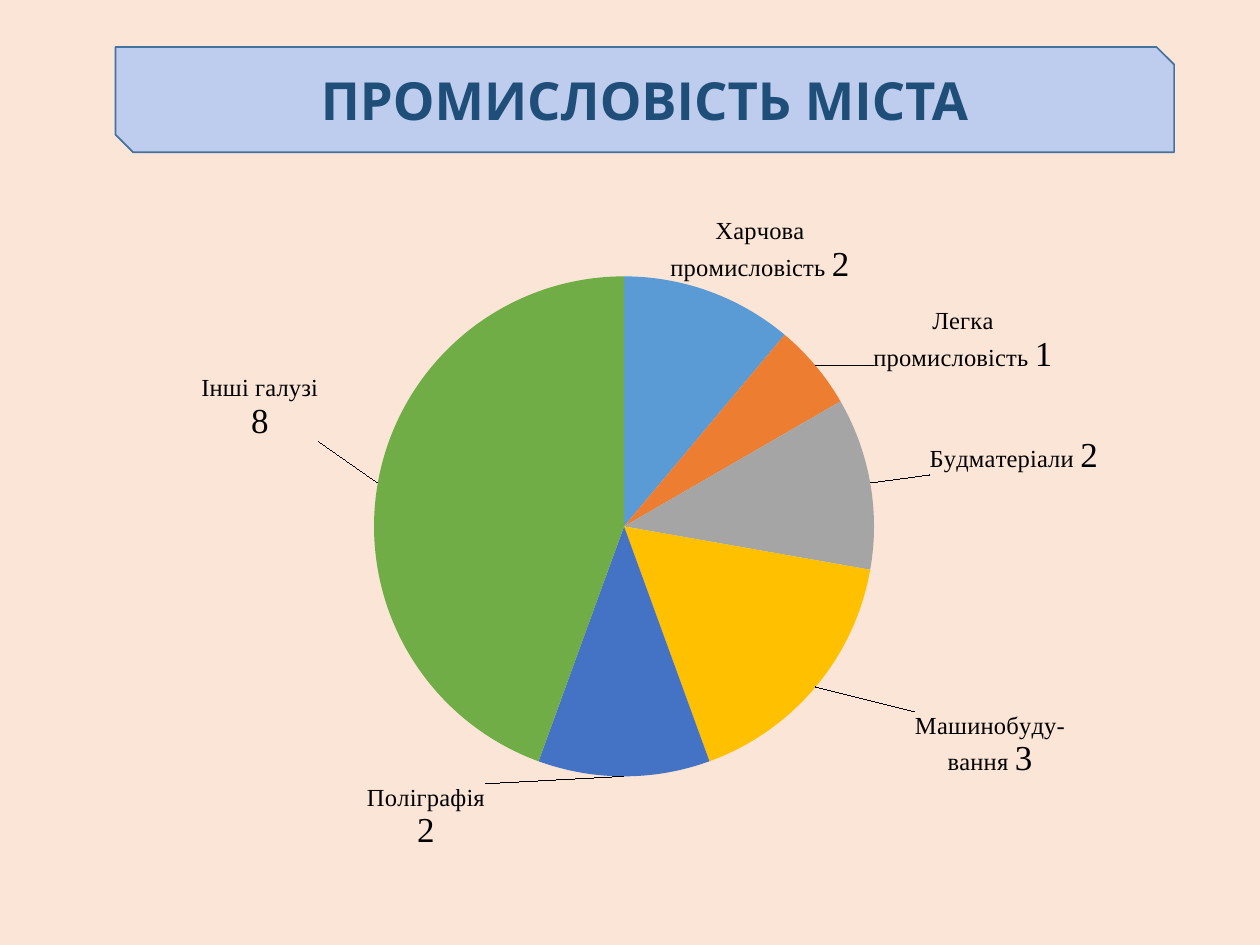
from lxml import etree
from pptx import Presentation
from pptx.chart.data import CategoryChartData
from pptx.dml.color import RGBColor
from pptx.enum.chart import XL_CHART_TYPE as ChartType, XL_LABEL_POSITION as LabelPos
from pptx.enum.shapes import MSO_SHAPE as Shape
from pptx.enum.text import MSO_ANCHOR as Anchor, PP_ALIGN as Align
from pptx.oxml import parse_xml
from pptx.oxml.ns import nsdecls, qn
from pptx.util import Cm, Pt

CREAM = RGBColor(0xFB, 0xE5, 0xD6)
PALE_BLUE = RGBColor(0xBE, 0xCD, 0xEE)
EDGE_BLUE = RGBColor(0x43, 0x73, 0x9E)
NAVY = RGBColor(0x1F, 0x4E, 0x79)
BLACK = RGBColor(0, 0, 0)
BLUE = RGBColor(0x5B, 0x9B, 0xD5)
ORANGE = RGBColor(0xED, 0x7D, 0x31)
GRAY = RGBColor(0xA5, 0xA5, 0xA5)
GOLD = RGBColor(0xFF, 0xC0, 0x00)
INDIGO = RGBColor(0x44, 0x72, 0xC4)
GREEN = RGBColor(0x70, 0xAD, 0x47)

TITLE = "ПРОМИСЛОВІСТЬ МІСТА"
INDUSTRIES = [
    ("Харчова промисловість", 2, BLUE, False, (-0.04, 0)),
    ("Легка промисловість", 1, ORANGE, False, (0.05, 0.02)),
    ("Будматеріали", 2, GRAY, False, (0.05, -0.01)),
    ("Машинобуду-вання", 3, GOLD, False, (0.09, 0.03)),
    ("Поліграфія", 2, INDIGO, True, (-0.19, 0)),
    ("Інші галузі", 8, GREEN, True, (-0.05, -0.06)),
]


def add_layout(parent, index, **values):
    """Insert a manual chart layout into parent at the given index."""
    old = parent.find(qn("c:layout"))
    if old is not None:
        parent.remove(old)
    layout = parse_xml(f"<c:layout {nsdecls('c')}/>")
    manual = etree.SubElement(layout, qn("c:manualLayout"))
    for name, value in values.items():
        etree.SubElement(manual, qn(f"c:{name}")).set("val", str(value))
    parent.insert(index, layout)


def add_run(p, text, size):
    """Add a label run of the given size to a paragraph."""
    r = p.add_run()
    r.text = text
    r.font.name = "Times New Roman"
    r.font.size = Pt(size)
    r.font.bold = False
    r.font.color.rgb = BLACK


def add_label(point, name, value, value_below, shift):
    """Write a slice label and move it from its default place."""
    label = point.data_label
    tf = label.text_frame
    p = tf.paragraphs[0]
    add_run(p, name if value_below else f"{name} ", 14)
    add_run(tf.add_paragraph() if value_below else p, str(value), 20)
    label.position = LabelPos.OUTSIDE_END
    dlbl = tf._txBody.getparent().getparent()
    add_layout(dlbl, 1, x=shift[0], y=shift[1])


def add_banner(slide, left, top, width, height):
    """Draw the title banner in the given box."""
    s = slide.shapes.add_shape(Shape.SNIP_2_DIAG_RECTANGLE, left, top, width, height)
    s.shadow.inherit = False
    s.fill.solid()
    s.fill.fore_color.rgb = PALE_BLUE
    s.line.color.rgb = EDGE_BLUE
    s.line.width = Pt(1)
    tf = s.text_frame
    tf.text = TITLE
    tf.vertical_anchor = Anchor.MIDDLE
    p = tf.paragraphs[0]
    p.alignment = Align.CENTER
    font = p.runs[0].font
    font.name, font.size, font.bold = "Open Sans", Pt(30), True
    font.color.rgb = NAVY


def add_pie(slide, left, top, width, height):
    """Draw the pie of industries in the given box."""
    data = CategoryChartData()
    data.categories = [row[0] for row in INDUSTRIES]
    data.add_series(TITLE, [row[1] for row in INDUSTRIES])
    chart = slide.shapes.add_chart(ChartType.PIE, left, top, width, height, data).chart
    chart.has_title = False
    chart.has_legend = False
    chart.font.name, chart.font.size = "Calibri", Pt(10)
    chart.font.color.rgb = BLACK
    plot = chart.plots[0]
    plot.vary_by_categories = True
    series = plot.series[0]
    labels = series.data_labels
    labels.show_value = labels.show_category_name = True
    labels.position = LabelPos.OUTSIDE_END
    labels.font.name, labels.font.size, labels.font.bold = "Times New Roman", Pt(20), True
    for i, (name, value, color, value_below, shift) in enumerate(INDUSTRIES):
        point = series.points[i]
        point.format.fill.solid()
        point.format.fill.fore_color.rgb = color
        add_label(point, name, value, value_below, shift)
    area = chart._chartSpace.chart.plotArea
    add_layout(area, 0, layoutTarget="inner", xMode="edge", yMode="edge",
               x=0.26, y=0.12, w=0.48, h=0.75)


def main():
    """Build and save the slide."""
    prs = Presentation()
    prs.slide_width, prs.slide_height = Cm(25.4), Cm(19.05)
    slide = prs.slides.add_slide(prs.slide_layouts[6])
    slide.background.fill.solid()
    slide.background.fill.fore_color.rgb = CREAM
    add_banner(slide, Cm(2.33), Cm(0.95), Cm(21.34), Cm(2.12))
    add_pie(slide, Cm(2.08), Cm(3.91), Cm(21), Cm(13.54))
    prs.save("out.pptx")


if __name__ == "__main__":
    main()
